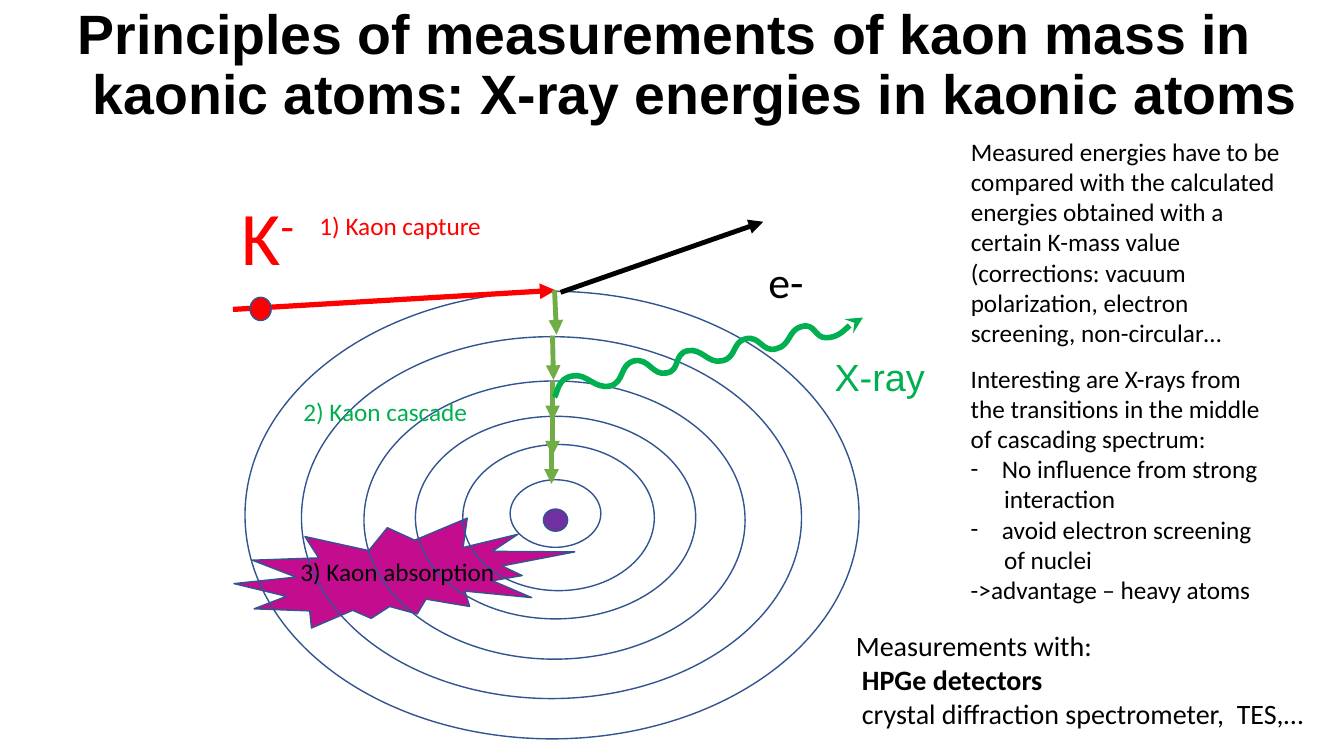
import pptx
import pptx.util
import pptx.dml.color
import pptx.enum.shapes
import pptx.enum.text
import pptx.oxml.ns
from lxml import etree

Inches = pptx.util.Inches
Pt = pptx.util.Pt
SHAPES = pptx.enum.shapes.MSO_SHAPE
ALIGN = pptx.enum.text.PP_ALIGN
ANCHOR = pptx.enum.text.MSO_ANCHOR
qn = pptx.oxml.ns.qn

COLORS = {"black": "000000", "red": "FF0000", "green": "00B050", "cascade": "70AD47",
          "outline": "325491", "nucleus": "7030A0", "burst": "C40C8F"}

TITLE = [("Principles of measurements of kaon mass in", 0),
         ("kaonic atoms: X-ray energies in kaonic atoms", 0.15)]
TITLE_BOX = (0.67, 0.09, 12.46, 1.14)

ORBITS = [(2.43, 2.89, 6.09, 4.44), (2.99, 3.34, 4.96, 3.59), (3.61, 3.78, 3.78, 2.76),
          (4.12, 4.13, 2.78, 2.01), (4.59, 4.41, 1.9, 1.45), (5.06, 4.76, 0.9, 0.67)]
BURST = (2.32, 5.14, 3.38, 1.09)
NUCLEUS = (5.39, 5.05, 0.24, 0.22)
KAON = (2.48, 2.95, 0.21, 0.23)

KAON_TRACK = ((2.31, 3.07), (5.51, 2.88))
ELECTRON_TRACK = ((5.56, 2.9), (7.57, 2.2))
CASCADE = [((5.5, 2.88), (5.52, 3.32)), ((5.48, 3.33), (5.49, 3.77)),
           ((5.48, 3.78), (5.48, 4.17)), ((5.48, 4.13), (5.48, 4.52)),
           ((5.47, 4.41), (5.47, 4.8))]

WAVE_START = (5.5, 3.94)
WAVE_CURVES = [
    ((5.53, 3.9), (5.53, 3.75), (5.68, 3.73)), ((5.82, 3.7), (5.89, 3.86), (6.05, 3.83)),
    ((6.2, 3.79), (6.14, 3.62), (6.29, 3.58)), ((6.44, 3.55), (6.47, 3.73), (6.61, 3.7)),
    ((6.75, 3.68), (6.68, 3.51), (6.82, 3.48)), ((6.96, 3.45), (7.02, 3.61), (7.16, 3.58)),
    ((7.31, 3.55), (7.26, 3.39), (7.4, 3.36)), ((7.54, 3.33), (7.56, 3.5), (7.7, 3.46)),
    ((7.84, 3.43), (7.82, 3.27), (7.95, 3.24)), ((8.09, 3.2), (8.08, 3.36), (8.2, 3.35)),
    ((8.31, 3.35), (8.41, 3.24), (8.45, 3.21))]
WAVE_END = (8.56, 3.15)

LABELS = [
    ((3.07, 2.04, 1.81, 0.4), "1) Kaon capture", "red"),
    ((2.91, 3.88, 1.85, 0.4), "2) Kaon cascade", "green"),
    ((2.88, 5.47, 2.15, 0.4), "3) Kaon absorption", "black")]

COMPARISON = ("Measured energies have to be compared with the calculated energies obtained "
              "with a certain K-mass value (corrections: vacuum polarization, electron "
              "screening, non-circular…")
TRANSITIONS = [
    ("Interesting are X-rays from", "plain"), ("the transitions in the middle", "plain"),
    ("of cascading spectrum:", "plain"), ("No influence from strong", "bullet"),
    ("interaction", "continued"), ("avoid electron screening", "bullet"),
    ("of nuclei", "continued"), ("->advantage – heavy atoms", "plain")]
DETECTORS = [("Measurements with:", 0, False), ("HPGe detectors", 0.06, True),
             ("crystal diffraction spectrometer,  TES,…", 0.06, False)]


def color(name):
    return pptx.dml.color.RGBColor.from_string(COLORS[name])


def indent(paragraph, left, first=0):
    properties = paragraph._p.get_or_add_pPr()
    properties.set("marL", str(Inches(left)))
    properties.set("indent", str(Inches(first)))
    return properties


def add_text(slide, box, lines, size, color_name, font="Calibri", align=ALIGN.LEFT, wrap=True):
    frame = slide.shapes.add_textbox(*map(Inches, box)).text_frame
    frame.word_wrap = wrap
    for index, line in enumerate(lines):
        paragraph = frame.paragraphs[0] if index == 0 else frame.add_paragraph()
        paragraph.add_run().text = line
        paragraph.alignment = align
        paragraph.font.name = font
        paragraph.font.size = Pt(size)
        paragraph.font.color.rgb = color(color_name)
    return frame


def raise_run(run):
    run._r.get_or_add_rPr().set("baseline", "30000")


def add_form(slide, preset, box, fill=None):
    shape = slide.shapes.add_shape(preset, *map(Inches, box))
    shape.shadow.inherit = False
    shape.line.color.rgb = color("outline")
    shape.line.width = Pt(1)
    if fill:
        shape.fill.solid()
        shape.fill.fore_color.rgb = color(fill)
    else:
        shape.fill.background()


def finish_arrow(shape, color_name, width, head):
    shape.line.color.rgb = color(color_name)
    shape.line.width = Pt(width)
    properties = shape._element.spPr
    etree.SubElement(properties.find(qn("a:ln")), qn("a:tailEnd"), type=head)
    if properties.find(qn("a:effectLst")) is None:
        etree.SubElement(properties, qn("a:effectLst"))


def add_arrow(slide, track, color_name, width):
    (x1, y1), (x2, y2) = track
    line = slide.shapes.add_connector(pptx.enum.shapes.MSO_CONNECTOR.STRAIGHT,
                                      Inches(x1), Inches(y1), Inches(x2), Inches(y2))
    finish_arrow(line, color_name, width, "triangle")


def add_wave(slide):
    points = [point for curve in WAVE_CURVES for point in curve] + [WAVE_END]
    builder = slide.shapes.build_freeform(*map(Inches, WAVE_START), scale=1)
    builder.add_line_segments([tuple(map(Inches, point)) for point in points], close=False)
    wave = builder.convert_to_shape()
    segments = list(wave._element.iter(qn("a:lnTo")))
    for index in range(0, 3 * len(WAVE_CURVES), 3):
        curve = etree.Element(qn("a:cubicBezTo"))
        segments[index].addprevious(curve)
        for segment in segments[index:index + 3]:
            curve.append(segment[0])
            segment.getparent().remove(segment)
    wave.fill.background()
    wave.shadow.inherit = False
    finish_arrow(wave, "green", 4, "stealth")


def add_title(slide):
    title = slide.shapes.title
    title.left, title.top, title.width, title.height = map(Inches, TITLE_BOX)
    frame = title.text_frame
    frame.auto_size = pptx.enum.text.MSO_AUTO_SIZE.NONE
    frame.vertical_anchor = ANCHOR.MIDDLE
    for index, (line, left) in enumerate(TITLE):
        paragraph = frame.paragraphs[0] if index == 0 else frame.add_paragraph()
        paragraph.text = line
        paragraph.alignment = ALIGN.LEFT
        paragraph.line_spacing = 0.9
        paragraph.space_before = Pt(0)
        paragraph.font.name = "Arial"
        paragraph.font.size = Pt(39.6)
        paragraph.font.bold = True
        paragraph.font.color.rgb = color("black")
        indent(paragraph, left)


def add_atom(slide):
    add_form(slide, SHAPES.EXPLOSION2, BURST, "burst")
    add_form(slide, SHAPES.OVAL, NUCLEUS, "nucleus")
    for orbit in ORBITS:
        add_form(slide, SHAPES.OVAL, orbit)
    add_arrow(slide, KAON_TRACK, "red", 3.75)
    add_form(slide, SHAPES.OVAL, KAON, "red")
    add_arrow(slide, ELECTRON_TRACK, "black", 3.5)
    for track in CASCADE:
        add_arrow(slide, track, "cascade", 3.5)
    add_wave(slide)


def add_labels(slide):
    kaon = add_text(slide, (2.19, 1.83, 0.93, 1.01), ["K"], 54, "red", align=ALIGN.CENTER)
    charge = kaon.paragraphs[0].add_run()
    charge.text = "-"
    raise_run(charge)
    electron = add_text(slide, (7.33, 2.39, 0.93, 0.71), ["e-"], 54, "black", align=ALIGN.CENTER)
    raise_run(electron.paragraphs[0].runs[0])
    for box, text, color_name in LABELS:
        add_text(slide, box, [text], 18, color_name, wrap=False)
    xray = add_text(slide, (8.12, 3.48, 1.21, 0.5), ["X-ray"], 27, "green", "Arial", ALIGN.CENTER)
    xray.margin_left = xray.margin_right = xray.margin_top = xray.margin_bottom = 0
    xray.vertical_anchor = ANCHOR.MIDDLE


def add_side_texts(slide):
    add_text(slide, (9.53, 1.3, 3.45, 2.22), [COMPARISON], 18, "black")
    transitions = add_text(slide, (9.53, 3.55, 3.16, 2.52),
                           [text for text, _ in TRANSITIONS], 18, "black", wrap=False)
    for paragraph, (_, style) in zip(transitions.paragraphs, TRANSITIONS):
        if style == "bullet":
            properties = indent(paragraph, 0.31, -0.31)
            properties.insert(0, etree.Element(qn("a:buFont"), typeface="Calibri"))
            properties.insert(1, etree.Element(qn("a:buChar"), char="-"))
        elif style == "continued":
            indent(paragraph, 0.33)
    detectors = add_text(slide, (8.39, 6.19, 4.67, 1.12),
                         [text for text, _, _ in DETECTORS], 20, "black")
    for paragraph, (_, left, bold) in zip(detectors.paragraphs, DETECTORS):
        indent(paragraph, left)
        paragraph.font.bold = bold


def main():
    presentation = pptx.Presentation()
    presentation.slide_width, presentation.slide_height = Inches(13.33), Inches(7.5)
    slide = presentation.slides.add_slide(presentation.slide_layouts[5])
    add_atom(slide)
    add_labels(slide)
    add_title(slide)
    add_side_texts(slide)
    presentation.save("out.pptx")


if __name__ == "__main__":
    main()
